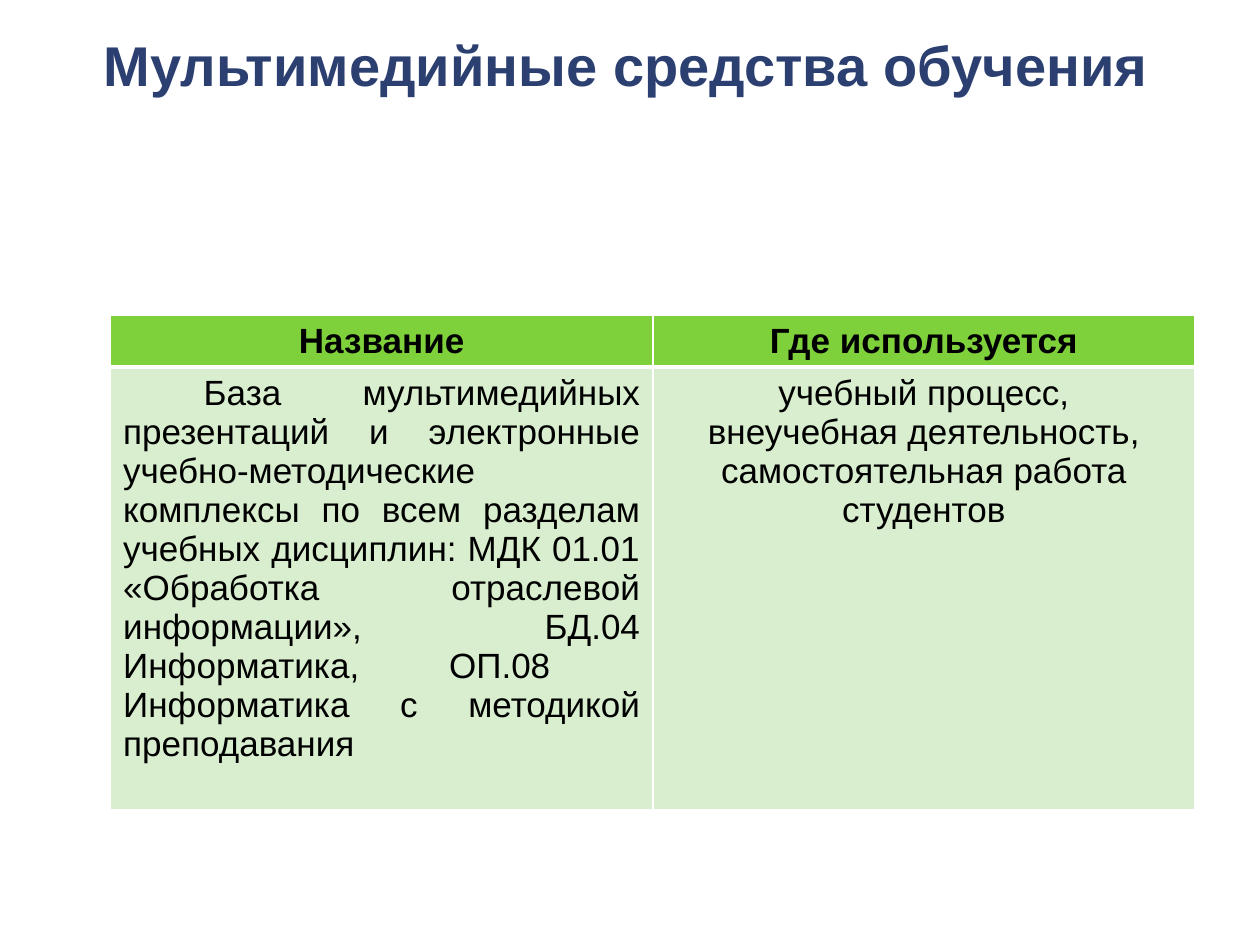
from lxml.etree import SubElement
from pptx import Presentation
from pptx.dml.color import RGBColor as RGB
from pptx.enum.text import MSO_ANCHOR as ANCHOR, PP_ALIGN as ALIGN
from pptx.oxml.ns import qn
from pptx.util import Pt

NAVY = RGB(0x2C, 0x3F, 0x71)
GREEN = RGB(0x7F, 0xD1, 0x3B)
PALE = RGB(0xD8, 0xEE, 0xCE)
BLACK = RGB(0, 0, 0)
WHITE = RGB(0xFF, 0xFF, 0xFF)

TITLE = "Мультимедийные средства обучения"
HEADERS = ["Название", "Где используется"]
RESOURCES = (
    "База мультимедийных презентаций и электронные учебно-методические "
    "комплексы по всем разделам учебных дисциплин: МДК 01.01 «Обработка "
    "отраслевой информации», БД.04 Информатика, ОП.08  Информатика "
    "с методикой преподавания"
)
USES = "учебный процесс,\nвнеучебная деятельность,\nсамостоятельная работа студентов"


class Deck:
    font = "Arial"

    def __init__(self, width, height):
        self.prs = Presentation()
        self.prs.slide_width, self.prs.slide_height = Pt(width), Pt(height)
        self.s = self.prs.slides.add_slide(self.prs.slide_layouts[5])

    def set_text(self, tf, text, size, color, bold, align, spacing=None):
        tf.text = text
        for p in tf.paragraphs:
            p.alignment = align
            if spacing:
                p.line_spacing = spacing
            for r in p.runs:
                r.font.name, r.font.size = self.font, Pt(size)
                r.font.bold, r.font.color.rgb = bold, color

    def title(self, text, x, y, w, h):
        sp = self.s.shapes.title
        sp.left, sp.top, sp.width, sp.height = Pt(x), Pt(y), Pt(w), Pt(h)
        tf = sp.text_frame
        tf.word_wrap, tf.vertical_anchor = True, ANCHOR.MIDDLE
        self.set_text(tf, text, 32, NAVY, True, ALIGN.LEFT, 0.9)

    def table(self, x, y, widths, heights):
        frame = self.s.shapes.add_table(
            len(heights), len(widths), Pt(x), Pt(y), Pt(sum(widths)), Pt(sum(heights)))
        for col, w in zip(frame.table.columns, widths):
            col.width = Pt(w)
        for row, h in zip(frame.table.rows, heights):
            row.height = Pt(h)
        return frame.table

    def cell(self, cell, text, fill, bold=False, align=ALIGN.CENTER, indent=0, top=1, bottom=1):
        self.set_text(cell.text_frame, text, 20, BLACK, bold, align)
        if indent:
            cell.text_frame.paragraphs[0]._p.get_or_add_pPr().set("indent", str(Pt(indent)))
        tcPr = cell._tc.get_or_add_tcPr()
        for side, width in (("L", 1), ("R", 1), ("T", top), ("B", bottom)):
            ln = SubElement(tcPr, qn(f"a:ln{side}"), w=str(Pt(width)))
            SubElement(SubElement(ln, qn("a:solidFill")), qn("a:srgbClr"), val=str(WHITE))
        cell.fill.solid()
        cell.fill.fore_color.rgb = fill


def main():
    deck = Deck(720, 540)
    table = deck.table(63.2, 180.2, [309.8, 309.8], [29.2, 252.8])
    for i, header in enumerate(HEADERS):
        deck.cell(table.cell(0, i), header, GREEN, bold=True, bottom=3)
    deck.cell(table.cell(1, 0), RESOURCES, PALE, align=ALIGN.JUSTIFY, indent=46, top=3)
    deck.cell(table.cell(1, 1), USES, PALE, top=3)
    deck.title(TITLE, 52, 0.7, 617, 77)
    deck.prs.save("out.pptx")


if __name__ == "__main__":
    main()
